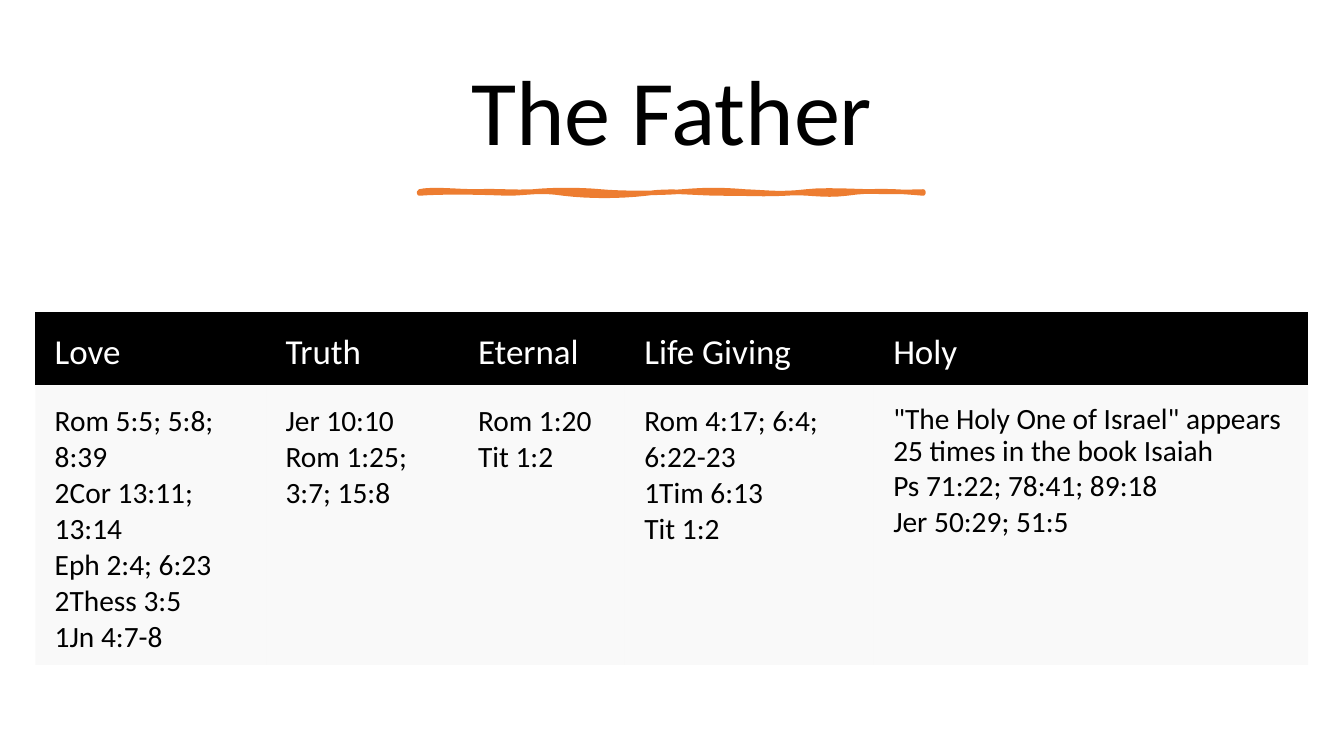
import pptx
import pptx.dml.color
import pptx.enum.text
import pptx.oxml.ns
import pptx.util
from lxml import etree

Pt = pptx.util.Pt
COLOURS = {"ink": "000000", "paper": "FFFFFF", "accent": "ED7D31", "panel": "F2F2F2"}
NO_STYLE_NO_GRID = "{2D5ABB26-0587-4C30-8999-92F81FD0307C}"

ATTRIBUTES = {
    "Love": ["Rom 5:5; 5:8; 8:39", "2Cor 13:11; 13:14", "Eph 2:4; 6:23", "2Thess 3:5", "1Jn 4:7-8"],
    "Truth": ["Jer 10:10", "Rom 1:25; 3:7; 15:8"],
    "Eternal": ["Rom 1:20", "Tit 1:2"],
    "Life Giving": ["Rom 4:17; 6:4; 6:22-23", "1Tim 6:13", "Tit 1:2"],
    "Holy": [
        '"The Holy One of Israel" appears 25 times in the book Isaiah',
        "Ps 71:22; 78:41; 89:18",
        "Jer 50:29; 51:5",
    ],
}
COLUMN_WIDTHS = [164.9, 137.5, 118.8, 177.8, 310.3]
ROW_HEIGHTS = [52.6, 199.4]

BRUSH_TOP = [
    (299.5, 136.8), (308.2, 134.6), (326.9, 136.8), (340.6, 136.8),
    (354.2, 136.1), (366.5, 137.5), (380.9, 136.8),
    (395.3, 135.4), (413.3, 135.4), (429.1, 136.8),
    (444.2, 138.2), (470.2, 138.2), (487.4, 136.8),
    (505.4, 135.4), (514.1, 135.4), (532.1, 136.8),
    (549.4, 137.5), (557.3, 139), (576, 136.8),
    (594.7, 134.6), (624.2, 138.2), (659.5, 136.8),
]
BRUSH_BOTTOM = [
    (659.5, 138.2), (644.4, 136.8), (622.8, 135.4), (604.8, 138.2),
    (586.8, 140.4), (576.7, 136.8), (560.9, 138.2),
    (544.3, 139), (537.8, 138.2), (516.2, 138.2),
    (494.6, 138.2), (480.2, 135.4), (461.5, 138.2),
    (442.1, 140.4), (421.2, 140.4), (402.5, 138.2),
    (384.5, 135.4), (376.6, 138.2), (362.2, 138.2),
    (347.8, 137.5), (315.4, 136.8), (299.5, 138.2),
]


def curve_points(controls, steps=8):
    points = [controls[0]]
    for first in range(0, len(controls) - 1, 3):
        segment = controls[first:first + 4]
        for step in range(1, steps + 1):
            t = step / steps
            weights = [(1 - t) ** 3, 3 * t * (1 - t) ** 2, 3 * t ** 2 * (1 - t), t ** 3]
            points.append(tuple(sum(w * p[axis] for w, p in zip(weights, segment)) for axis in (0, 1)))
    return points


class SlideBuilder:
    font = "Calibri"

    def __init__(self, slide):
        self.slide = slide

    def colour(self, name):
        return pptx.dml.color.RGBColor.from_string(COLOURS[name])

    def style(self, paragraph, size, colour):
        paragraph.font.name = self.font
        paragraph.font.size = Pt(size)
        paragraph.font.color.rgb = self.colour(colour)

    def title(self, text, left, top, width, height):
        heading = self.slide.shapes.title
        heading.left, heading.top, heading.width, heading.height = map(Pt, (left, top, width, height))
        heading.text_frame.text = text
        heading.text_frame.vertical_anchor = pptx.enum.text.MSO_ANCHOR.MIDDLE
        paragraph = heading.text_frame.paragraphs[0]
        paragraph.alignment = pptx.enum.text.PP_ALIGN.CENTER
        paragraph.line_spacing = 0.9
        self.style(paragraph, 66, "ink")

    def brush_stroke(self, top_edge, bottom_edge):
        outline = [(Pt(x), Pt(y)) for x, y in curve_points(top_edge) + curve_points(bottom_edge)]
        builder = self.slide.shapes.build_freeform(*outline[0])
        builder.add_line_segments(outline[1:], close=True)
        stroke = builder.convert_to_shape()
        stroke.shadow.inherit = False
        stroke.fill.solid()
        stroke.fill.fore_color.rgb = self.colour("accent")
        stroke.line.color.rgb = self.colour("accent")
        stroke.line.width = Pt(3.25)

    def cell(self, cell, lines, size, colour, fill):
        cell.margin_left = cell.margin_right = Pt(13.9)
        cell.margin_top, cell.margin_bottom = Pt(13), Pt(7)
        cell.fill.solid()
        cell.fill.fore_color.rgb = self.colour(fill)
        cell.text_frame.text = "\n".join(lines)
        for paragraph in cell.text_frame.paragraphs:
            self.style(paragraph, size, colour)

    def translucent(self, cell, percent):
        qn = pptx.oxml.ns.qn
        colour = next(cell._tc.iter(qn("a:srgbClr")), None)
        for fill in cell._tc.tcPr.iter(qn("a:srgbClr")):
            colour = fill
        etree.SubElement(colour, qn("a:alpha")).set("val", str(percent * 1000))

    def table(self, columns, widths, heights, left, top):
        table = self.slide.shapes.add_table(
            len(heights), len(widths), Pt(left), Pt(top), Pt(sum(widths)), Pt(sum(heights))
        ).table
        table.first_row = table.horz_banding = False
        table._tbl.tblPr.find(pptx.oxml.ns.qn("a:tableStyleId")).text = NO_STYLE_NO_GRID
        for row, height in zip(table.rows, heights):
            row.height = Pt(height)
        for index, (heading, verses) in enumerate(columns.items()):
            table.columns[index].width = Pt(widths[index])
            header, body = table.cell(0, index), table.cell(1, index)
            self.cell(header, [heading], 25, "paper", "ink")
            header.vertical_anchor = pptx.enum.text.MSO_ANCHOR.MIDDLE
            self.cell(body, verses, 21, "ink", "panel")
            self.translucent(body, 45)
        return table


def main():
    deck = pptx.Presentation()
    deck.slide_width, deck.slide_height = Pt(960), Pt(540)
    father = SlideBuilder(deck.slides.add_slide(deck.slide_layouts[5]))
    father.title("The Father", 50.4, 33.1, 859, 98.6)
    father.brush_stroke(BRUSH_TOP, BRUSH_BOTTOM)
    attributes = father.table(ATTRIBUTES, COLUMN_WIDTHS, ROW_HEIGHTS, 25.2, 222.6)
    holy_quote = attributes.cell(1, 4).text_frame.paragraphs[0]
    holy_quote.line_spacing = 0.9
    holy_quote.space_before = Pt(10)
    deck.save("out.pptx")


if __name__ == "__main__":
    main()
